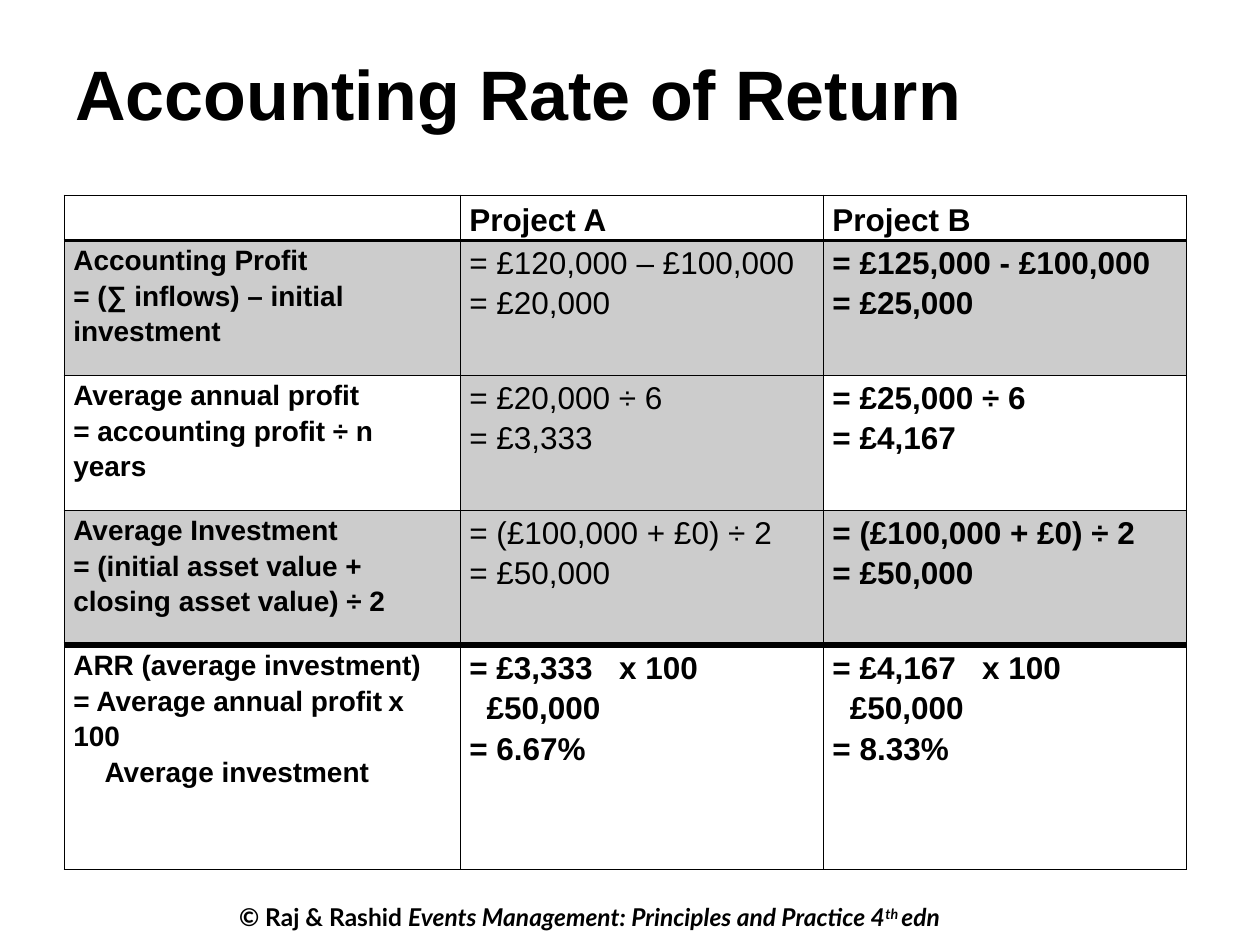
from lxml.etree import SubElement
from pptx import Presentation
from pptx.dml.color import RGBColor
from pptx.enum.text import MSO_ANCHOR as Anchor
from pptx.oxml.ns import qn
from pptx.util import Cm, Pt

BLACK = "000000"
TITLE = "Accounting Rate of Return"
# Text, italic, superscript
FOOTER = [
    ("© Raj & Rashid ", False, False),
    ("Events Management: Principles and Practice 4", True, False),
    ("th ", True, True),
    ("edn", True, False),
]

# Each cell is a list of lines
ROWS = [
    [[], ["Project A"], ["Project B"]],
    [["Accounting Profit", "= (∑ inflows) – initial investment"],
     ["= £120,000 – £100,000", "= £20,000"],
     ["= £125,000 - £100,000", "= £25,000"]],
    [["Average annual profit", "= accounting profit ÷ n years"],
     ["= £20,000 ÷ 6", "= £3,333"],
     ["= £25,000 ÷ 6", "= £4,167"]],
    [["Average Investment", "= (initial asset value + closing asset value) ÷ 2"],
     ["= (£100,000 + £0) ÷ 2", "= £50,000"],
     ["= (£100,000 + £0) ÷ 2", "= £50,000"]],
    [["ARR (average investment)", "= Average annual profit\tx 100", "Average investment"],
     ["= £3,333\tx 100", "£50,000", "= 6.67%"],
     ["= £4,167\tx 100", "£50,000", "= 8.33%"]],
]
COLUMN_WIDTHS = [7.98, 7.32, 7.32]
ROW_HEIGHTS = [0.91, 2.72, 2.72, 2.72, 4.52]
RULES = [1, 2, 1, 1, 4, 1]  # horizontal rule weights, top to bottom
SHADED = {(1, 0), (1, 1), (1, 2), (2, 1), (3, 0), (3, 1), (3, 2)}
DENOMINATORS = {"Average investment": 0.63, "£50,000": 0.35}  # indents
LAST = len(ROWS) - 1


def color(value):
    return RGBColor.from_string(value)


def style(span, size, font="Arial", bold=True, italic=False):
    span.font.size = Pt(size)
    span.font.name = font
    span.font.bold = bold
    span.font.italic = italic
    span.font.color.rgb = color(BLACK)


def add_border(cell, side, weight):
    line = SubElement(cell._tc.get_or_add_tcPr(), qn(f"a:ln{side}"), w=str(Pt(weight)))
    SubElement(SubElement(line, qn("a:solidFill")), qn("a:srgbClr"), val=BLACK)


def shade(cell):
    cell.fill.solid()
    cell.fill.fore_color.rgb = color(BLACK)
    tint = cell._tc.tcPr.find(qn("a:solidFill")).find(qn("a:srgbClr"))
    SubElement(tint, qn("a:alpha"), val="20000")


def fill_cell(cell, lines, row, column):
    cell.margin_left = cell.margin_right = Cm(0.18)
    cell.margin_top = cell.margin_bottom = 0
    cell.vertical_anchor = Anchor.TOP if row else Anchor.MIDDLE
    cell.text_frame.text = "\n".join(lines)
    for para, text in zip(cell.text_frame.paragraphs, lines):
        para.line_spacing = 1.15
        props = para._p.get_or_add_pPr()
        if row == LAST and text in DENOMINATORS:
            props.set("marL", str(Cm(DENOMINATORS[text])))
        if "\t" in text and column:
            tabs = SubElement(props, qn("a:tabLst"))
            SubElement(tabs, qn("a:tab"), pos=str(Cm(3.02)), algn="l")
        plain = column == 1 and 0 < row < LAST
        for span in para.runs:
            style(span, 18 if column or not row else 16, bold=not plain)


deck = Presentation()
deck.slide_width, deck.slide_height = Cm(25.4), Cm(19.05)
page = deck.slides.add_slide(deck.slide_layouts[6])

# Footer
box = page.shapes.add_textbox(Cm(4.57), Cm(18.06), Cm(17.7), Cm(0.86))
box.text_frame.word_wrap = False
for text, italic, raised in FOOTER:
    span = box.text_frame.paragraphs[0].add_run()
    span.text = text
    style(span, 14, "Lato", italic=italic)
    if raised:
        span.font._element.set("baseline", "30000")

# Title
box = page.shapes.add_textbox(Cm(1.27), Cm(0.76), Cm(22.86), Cm(2.54))
box.text_frame.word_wrap = True
box.text_frame.margin_top = Cm(0.25)
box.text_frame.text = TITLE
style(box.text_frame.paragraphs[0].runs[0], 40)

# Table
table = page.shapes.add_table(
    len(ROWS), len(COLUMN_WIDTHS), Cm(1.3), Cm(3.94),
    Cm(sum(COLUMN_WIDTHS)), Cm(sum(ROW_HEIGHTS))).table
table.first_row = table.horz_banding = False
for column, width in zip(table.columns, COLUMN_WIDTHS):
    column.width = Cm(width)
for table_row, height in zip(table.rows, ROW_HEIGHTS):
    table_row.height = Cm(height)

for r, row in enumerate(ROWS):
    for c, lines in enumerate(row):
        cell = table.cell(r, c)
        fill_cell(cell, lines, r, c)
        for side, weight in zip("LRTB", (1, 1, RULES[r], RULES[r + 1])):
            add_border(cell, side, weight)
        if (r, c) in SHADED:
            shade(cell)
        else:
            cell.fill.background()

deck.save("out.pptx")
